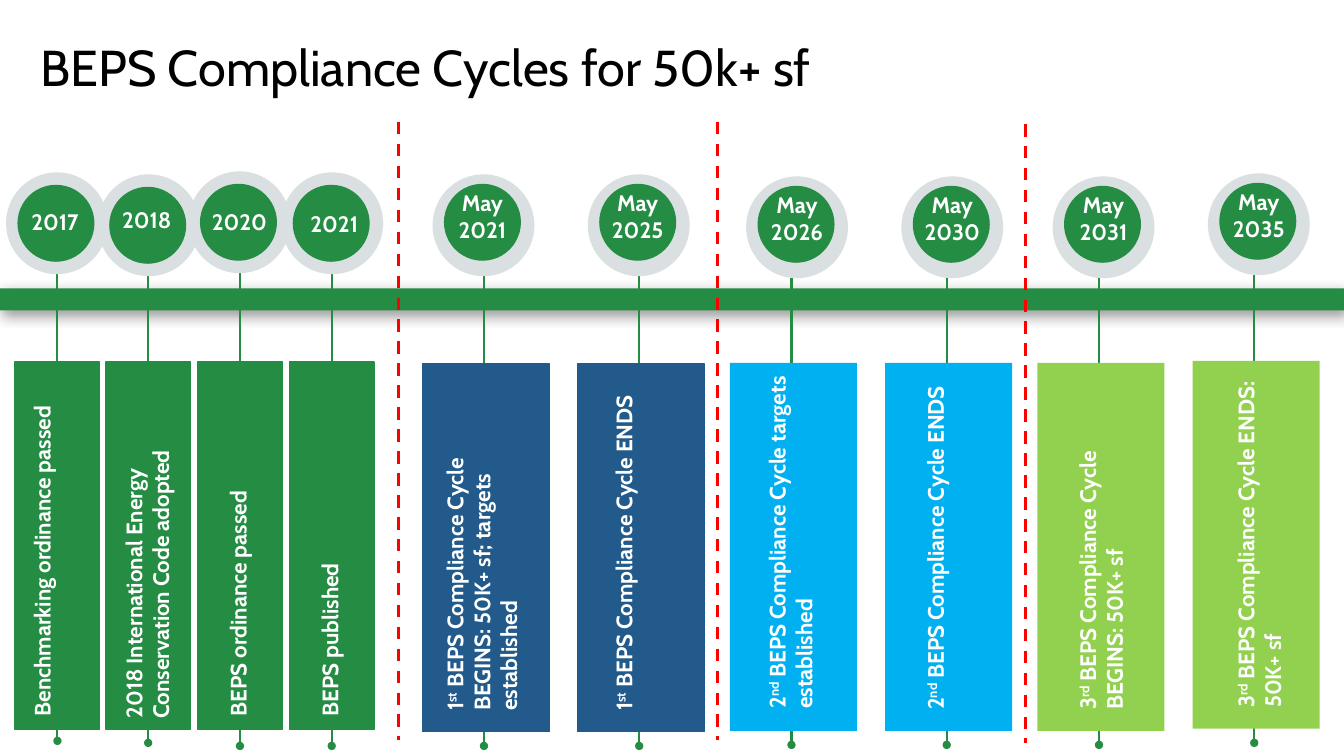
import pptx
import pptx.util
import pptx.dml.color
import pptx.enum.dml
import pptx.enum.shapes
import pptx.enum.text
import lxml.etree

Inches, Pt = pptx.util.Inches, pptx.util.Pt
SHAPE = pptx.enum.shapes.MSO_SHAPE
ALIGN = pptx.enum.text.PP_ALIGN
A = "{http://schemas.openxmlformats.org/drawingml/2006/main}"
GREEN, BLUE, CYAN, LIME = "248C43", "225B8B", "00B0F0", "92D050"
GREY, RED, WHITE, BLACK = "DADFE1", "FF0000", "FFFFFF", "000000"


def paint(item, hue):
    """Set a fill, line or font to a hex colour."""
    if hasattr(item, "solid"):
        item.solid()
        item.fore_color.rgb = pptx.dml.color.RGBColor.from_string(hue)
    elif hasattr(item, "fill"):
        paint(item.fill, hue)


def add(kind, x, y, w, h, hue=None, edge=None, runs=(), align=ALIGN.LEFT):
    """Add a plain shape, or a text box when kind is None."""
    place = [Inches(n) for n in (x, y, w, h)]
    if kind is None:
        item = slide.shapes.add_textbox(*place)
        item.text_frame.word_wrap = True
        para = item.text_frame.paragraphs[0]
        para.alignment = align
        for text, base in runs:
            run = para.add_run()
            run.text = text
            run.font.name, run.font.size, run.font.bold = "Cabin", Pt(16), True
            paint(run.font, WHITE)
            if base:
                run.font._element.set("baseline", str(base))
        return item
    item = slide.shapes.add_shape(kind, *place)
    item.shadow.inherit = False
    paint(item.fill, hue)
    if edge:
        paint(item.line, edge)
        item.line.width = Pt(1)
    else:
        item.line.fill.background()
    return item


deck = pptx.Presentation()
deck.slide_width, deck.slide_height = Inches(13.33), Inches(7.5)
slide = deck.slides.add_slide(deck.slide_layouts[5])

# Title
title = slide.shapes.title
title.left, title.top = Inches(0.27), Inches(0.29)
title.width, title.height = Inches(12.9), Inches(0.74)
frame = title.text_frame
frame.auto_size = pptx.enum.text.MSO_AUTO_SIZE.NONE
frame.vertical_anchor = pptx.enum.text.MSO_ANCHOR.TOP
frame.margin_left = frame.margin_right = Inches(0.13)
frame.margin_top = frame.margin_bottom = Inches(0.07)
para = frame.paragraphs[0]
para.alignment = ALIGN.LEFT
run = para.add_run()
run.text = "BEPS Compliance Cycles for 50k+ sf"
run.font.name, run.font.size = "Cabin", Pt(36)
paint(run.font, BLACK)

# Time bar with its soft shadow
bar = add(SHAPE.RECTANGLE, 0, 2.86, 13.33, 0.22, GREEN)
glow = lxml.etree.SubElement(
    bar._element.spPr.find(A + "effectLst"), A + "outerShdw",
    blurRad=str(Pt(10)), dist=str(Pt(3.6)), dir="3360000", rotWithShape="0")
tint = lxml.etree.SubElement(glow, A + "srgbClr", val=BLACK)
lxml.etree.SubElement(tint, A + "alpha", val="40000")

# Stages: label, stem x, top, end; ring x, y; label x, y; card top, hue;
# note centre x, y and line count; ordinal, suffix, note
stages = [
    ("May 2021", 4.8, 2.74, 7.4, 4.29, 1.73, 4.32, 1.83, 3.61, BLUE, 4.78, 5.43, 3,
     "1", "st", " BEPS Compliance Cycle BEGINS: 50K+ sf; targets established"),
    ("May 2025", 6.34, 2.74, 7.4, 5.83, 1.73, 5.86, 1.83, 3.61, BLUE, 6.32, 5.43, 2,
     "1", "st", " BEPS Compliance Cycle ENDS"),
    ("May 2026", 7.85, 2.73, 7.39, 7.4, 1.75, 7.44, 1.85, 3.6, CYAN, 7.84, 5.36, 2,
     "2", "nd", " BEPS Compliance Cycle targets established"),
    ("May 2030", 9.39, 2.73, 7.39, 8.94, 1.75, 8.98, 1.85, 3.6, CYAN, 9.41, 5.37, 2,
     "2", "nd", " BEPS Compliance Cycle ENDS"),
    ("May 2031", 10.9, 2.73, 7.39, 10.44, 1.75, 10.48, 1.85, 3.6, LIME, 10.92, 5.37, 2,
     "3", "rd", " BEPS Compliance Cycle BEGINS: 50K+ sf"),
    ("May 2035", 12.44, 2.7, 7.37, 11.98, 1.72, 12.02, 1.82, 3.58, LIME, 12.49, 5.35, 2,
     "3", "rd", " BEPS Compliance Cycle ENDS: 50K+ sf"),
    ("2017", 0.57, 2.71, 7.35, 0.06, 1.71, 0.08, 2.02, 3.59, GREEN, 0.55, 5.4, 2,
     "", "", "Benchmarking ordinance passed"),
    ("2018", 1.47, 2.74, 7.37, 0.97, 1.73, 0.99, 2.0, 3.59, GREEN, 1.46, 5.42, 2,
     "", "", "2018 International Energy Conservation Code adopted"),
    ("2020", 2.38, 2.71, 7.4, 1.87, 1.7, 1.91, 2.02, 3.59, GREEN, 2.36, 5.4, 1,
     "", "", "BEPS ordinance passed"),
    ("2021", 3.29, 2.72, 7.4, 2.79, 1.71, 2.85, 2.04, 3.59, GREEN, 3.27, 5.4, 1,
     "", "", "BEPS published"),
]
lines = []
for (label, stem, top, end, ringx, ringy, tagx, tagy, head, hue,
     midx, midy, rows, rank, suffix, note) in stages:
    past = hue == GREEN
    lines.append((stem, top, end, GREEN, 1.5))

    # Date circle
    add(SHAPE.OVAL, ringx, ringy, 1.01, 1.01, GREY)
    add(SHAPE.OVAL, ringx + 0.12, ringy + (0.13 if past else 0.1),
        0.75, 0.75, GREEN, GREEN)
    add(None, tagx, tagy, 0.93, 0.37 if past else 0.64,
        runs=[(label, 0)], align=ALIGN.CENTER)

    # Card and its upright note
    wide = 0.84 if past else 1.26
    add(SHAPE.RECTANGLE, stem - (0.42 if past else 0.61), head, wide, 3.65,
        hue, hue if hue in (GREEN, BLUE) else None)
    long = 3.61 if past else 3.44 if hue == BLUE else 3.54
    tall = 0.1 + 0.27 * rows
    runs = [(rank, 0), (suffix, 30000), (note, 0)]
    box = add(None, midx - long / 2, midy - tall / 2, long, tall,
              runs=[pair for pair in runs if pair[0]])
    box.rotation = 270

# Stems behind the cards, dashed cycle borders on top
borders = [(3.95, 1.21, 7.34, RED, 2.25), (7.12, 1.21, 7.34, RED, 2.25),
           (10.17, 1.23, 7.37, RED, 2.25)]
for x, top, end, hue, width in lines + borders:
    line = slide.shapes.add_connector(
        pptx.enum.shapes.MSO_CONNECTOR.STRAIGHT,
        Inches(x), Inches(top), Inches(x), Inches(end))
    paint(line.line, hue)
    line.line.width = Pt(width)
    props = line._element.spPr
    if hue == RED:
        line.line.dash_style = pptx.enum.dml.MSO_LINE.DASH
    else:
        lxml.etree.SubElement(props.find(A + "ln"), A + "tailEnd", type="oval")
        bar._element.addnext(line._element)
    lxml.etree.SubElement(props, A + "effectLst")

deck.save("out.pptx")
